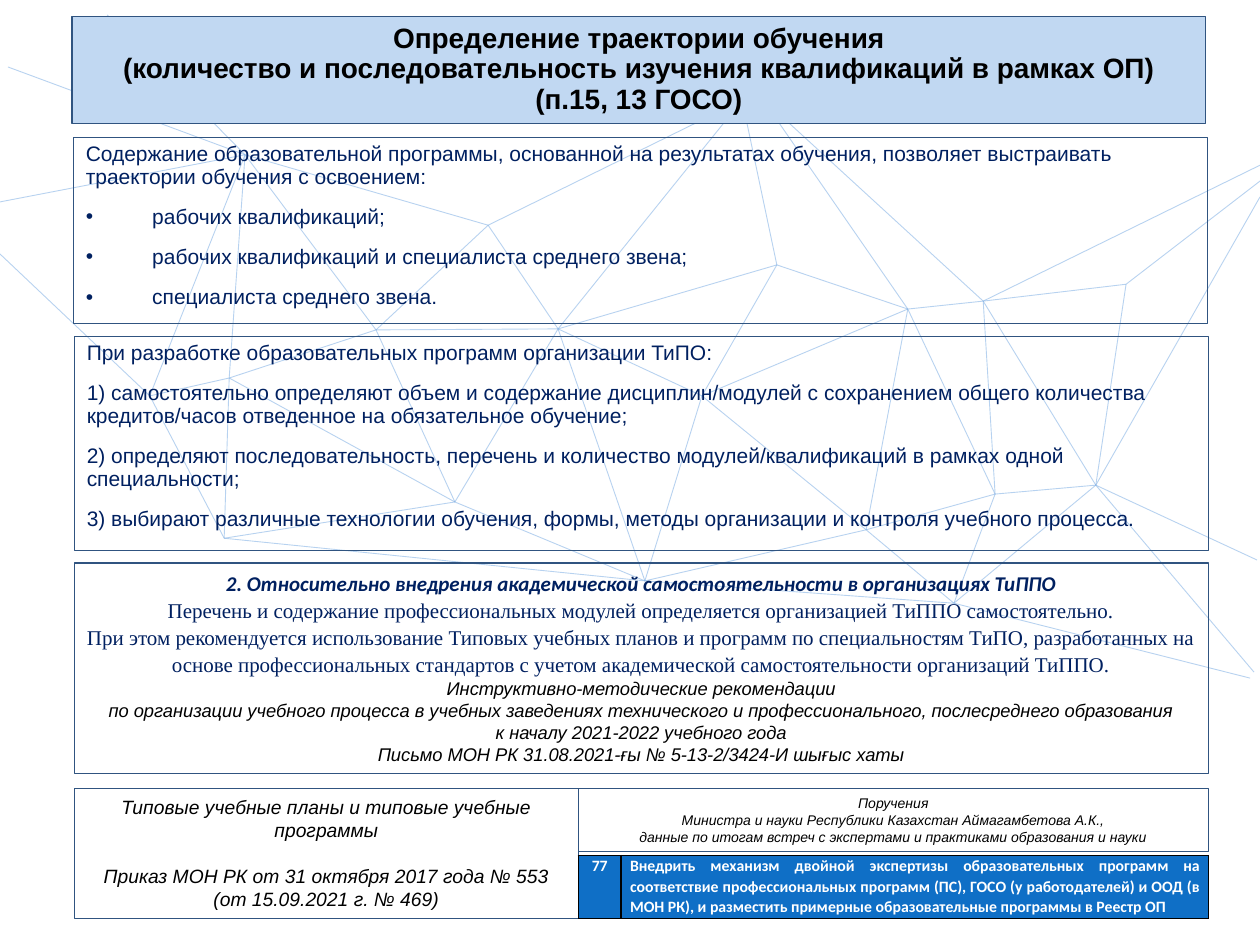
"""Build the slide on choosing a learning path, with boxed text over a line network."""
from lxml import etree
from pptx import Presentation
from pptx.dml.color import RGBColor
from pptx.enum.shapes import MSO_CONNECTOR, MSO_SHAPE
from pptx.enum.text import MSO_ANCHOR, PP_ALIGN
from pptx.oxml.ns import qn
from pptx.util import Cm, Pt

LEFT, CENTER, JUSTIFY = PP_ALIGN.LEFT, PP_ALIGN.CENTER, PP_ALIGN.JUSTIFY
TOP, MIDDLE = MSO_ANCHOR.TOP, MSO_ANCHOR.MIDDLE
RECTANGLE, STRAIGHT = MSO_SHAPE.RECTANGLE, MSO_CONNECTOR.STRAIGHT

COLORS = {
    "web": "82B1E5", "title": "C1D8F2", "border": "305480", "navy": "002060",
    "black": "000000", "white": "FFFFFF", "cell": "0F6FC6",
}
WEB_ALPHA = "56000"

NODES = {
    "A": (4.94, 3.12), "B": (3.02, 7.98), "C": (4.62, 7.62), "D": (7.58, 6.65),
    "E": (9.84, 4.54), "F": (4.52, 10.85), "G": (9.17, 10.12), "H": (11.25, 6.63),
    "I": (13, 11.71), "J": (14.15, 7.98), "K": (14.96, 2.02), "T": (15.36, 1.98),
    "L": (15.66, 5.34), "M": (18.3, 6.23), "N": (19.82, 6.07), "O": (17.46, 10.68),
    "P": (20.06, 9.96), "Q": (22.09, 9.78), "R": (22.7, 5.73), "S": (19.23, 12.16),
    "a": (2.16, 0.3), "b": (0.16, 1.35), "c": (0, 4.07), "d": (0, 5.12),
    "e": (25.4, 3.33), "f": (25.4, 3.65), "g": (25.4, 3.97),
    "h": (25.34, 11.29), "i": (25.28, 13.55), "j": (25.2, 13.67),
}
EDGES = (
    "aA bA cA dB AB AC BC AD CD AE DE CF BF GC GD GF HE DH GH IH IG IF IJ JH KE "
    "KH LJ TM JM TN OM OJ OI NM PM NP PO SI SO SP Ne Rf Qg RN RQ NQ PQ SQ Qh Qi "
    "Sj KL LM HL"
).split()

TITLE = {"size": 16, "bold": True, "align": CENTER, "line": 0.9}
BODY = {"size": 12, "color": "navy", "line": 0.9}
NEXT = {**BODY, "before": 10}
BULLET = {**NEXT, "bullet": True}
HEADING = {"size": 12, "color": "navy", "font": "Calibri", "bold": True, "italic": True,
           "align": CENTER, "line": 1.07}
SERIF = {"size": 12, "color": "navy", "font": "Times New Roman", "align": CENTER, "line": 1.07}
LETTER = {"size": 10.5, "italic": True, "align": CENTER}
PLAN = {"size": 11, "italic": True, "align": CENTER}
ORDER = {"size": 8, "italic": True, "align": CENTER}
CELL = {"size": 9, "color": "white", "font": "Calibri", "bold": True, "line": 1.07}

BOXES = [
    ((1.45, 0.33, 22.86, 2.16), "title", MIDDLE, [
        ("Определение траектории обучения\v"
         "(количество и последовательность изучения квалификаций в рамках ОП)\v"
         "(п.15, 13 ГОСО)", TITLE),
    ]),
    ((1.48, 2.77, 22.86, 3.76), None, TOP, [
        ("Содержание образовательной программы, основанной на результатах обучения, "
         "позволяет выстраивать траектории обучения с освоением:", BODY),
        ("рабочих квалификаций;", BULLET),
        ("рабочих квалификаций и специалиста среднего звена;", BULLET),
        ("специалиста среднего звена.", BULLET),
    ]),
    ((1.5, 6.78, 22.86, 4.32), None, TOP, [
        ("При разработке образовательных программ организации ТиПО:", BODY),
        ("1) самостоятельно определяют объем и содержание дисциплин/модулей с сохранением "
         "общего количества кредитов/часов отведенное на обязательное обучение;", NEXT),
        ("2) определяют последовательность, перечень и количество модулей/квалификаций "
         "в рамках одной специальности;", NEXT),
        ("3) выбирают различные технологии обучения, формы, методы организации и контроля "
         "учебного процесса.", NEXT),
    ]),
    ((1.5, 15.9, 10.16, 2.62), None, TOP, [
        ("Типовые учебные планы и типовые учебные программы", PLAN),
        ("Приказ МОН РК от 31 октября 2017 года № 553 (от 15.09.2021 г. № 469)",
         {**PLAN, "before": 13}),
    ]),
    ((1.5, 11.35, 22.86, 4.24), None, TOP, [
        ("2. Относительно внедрения академической самостоятельности в организациях ТиППО",
         HEADING),
        ("Перечень и содержание профессиональных модулей определяется организацией ТиППО "
         "самостоятельно.", SERIF),
        ("При этом рекомендуется использование Типовых учебных планов и программ по "
         "специальностям ТиПО, разработанных на основе профессиональных стандартов с учетом "
         "академической самостоятельности организаций ТиППО.", SERIF),
        ("Инструктивно-методические рекомендации", LETTER),
        ("по организации учебного процесса в учебных заведениях технического и "
         "профессионального, послесреднего образования", LETTER),
        ("к началу 2021-2022 учебного года", LETTER),
        ("Письмо МОН РК 31.08.2021-ғы № 5-13-2/3424-И шығыс хаты", LETTER),
    ]),
    ((11.66, 15.9, 12.7, 1.27), None, TOP, [
        ("Поручения", ORDER),
        ("Министра и науки Республики Казахстан Аймагамбетова А.К.,", ORDER),
        ("данные по итогам встреч с экспертами и практиками образования и науки", ORDER),
    ]),
]

TABLE_PLACE = (11.66, 17.25, 12.7, 1.27)
TABLE_COLUMNS = (0.86, 11.84)
TABLE_CELLS = [
    ("77", {**CELL, "align": CENTER}),
    ("Внедрить механизм двойной экспертизы образовательных программ на соответствие "
     "профессиональных программ (ПС), ГОСО (у работодателей) и ООД (в МОН РК), и разместить "
     "примерные образовательные программы в Реестр ОП", {**CELL, "align": JUSTIFY}),
]


def rgb(name):
    return RGBColor.from_string(COLORS[name])


def lengths(values):
    return [Cm(value) for value in values]


def add_bullet(para):
    props = para._p.get_or_add_pPr()
    props.set("marL", str(Cm(1.34)))
    props.set("indent", str(-Cm(1.34)))
    etree.SubElement(props, qn("a:buFont"), typeface="Arial")
    etree.SubElement(props, qn("a:buChar"), char="•")


def write(frame, paragraphs):
    for index, (text, style) in enumerate(paragraphs):
        para = frame.add_paragraph() if index else frame.paragraphs[0]
        para.text = text
        para.alignment = style.get("align", LEFT)
        para.line_spacing = style.get("line", 1.0)
        para.space_before = Pt(style.get("before", 0))
        font = para.font
        font.name = style.get("font", "Arial")
        font.size = Pt(style["size"])
        font.bold = style.get("bold", False)
        font.italic = style.get("italic", False)
        font.color.rgb = rgb(style.get("color", "black"))
        if style.get("bullet"):
            add_bullet(para)


def add_web(page):
    for start, end in EDGES:
        line = page.shapes.add_connector(STRAIGHT, *lengths(NODES[start] + NODES[end]))
        line.line.width = Pt(0.5)
        line.line.color.rgb = rgb("web")
        color = line._element.spPr.find(".//" + qn("a:srgbClr"))
        etree.SubElement(color, qn("a:alpha"), val=WEB_ALPHA)
        etree.SubElement(line._element.spPr, qn("a:effectLst"))


def add_box(page, place, fill, anchor, paragraphs):
    box = page.shapes.add_shape(RECTANGLE, *lengths(place))
    box.shadow.inherit = False
    if fill:
        box.fill.solid()
        box.fill.fore_color.rgb = rgb(fill)
    else:
        box.fill.background()
    box.line.color.rgb = rgb("border")
    box.line.width = Pt(0.75)
    box.text_frame.word_wrap = True
    box.text_frame.vertical_anchor = anchor
    write(box.text_frame, paragraphs)


def add_border(cell):
    props = cell._tc.get_or_add_tcPr()
    for index, side in enumerate(("a:lnL", "a:lnR", "a:lnT", "a:lnB")):
        line = etree.Element(qn(side), w=str(Pt(1)))
        fill = etree.SubElement(line, qn("a:solidFill"))
        etree.SubElement(fill, qn("a:srgbClr"), val=COLORS["black"])
        props.insert(index, line)


def add_order_table(page):
    table = page.shapes.add_table(1, len(TABLE_CELLS), *lengths(TABLE_PLACE)).table
    for index, content in enumerate(TABLE_CELLS):
        table.columns[index].width = Cm(TABLE_COLUMNS[index])
        cell = table.cell(0, index)
        cell.margin_left = cell.margin_right = Cm(0.18)
        cell.margin_top = cell.margin_bottom = 0
        cell.fill.solid()
        cell.fill.fore_color.rgb = rgb("cell")
        add_border(cell)
        write(cell.text_frame, [content])


def main():
    deck = Presentation()
    deck.slide_width, deck.slide_height = Cm(25.4), Cm(19.05)
    page = deck.slides.add_slide(deck.slide_layouts[6])
    add_web(page)
    for box in BOXES:
        add_box(page, *box)
    add_order_table(page)
    deck.save("out.pptx")


if __name__ == "__main__":
    main()
